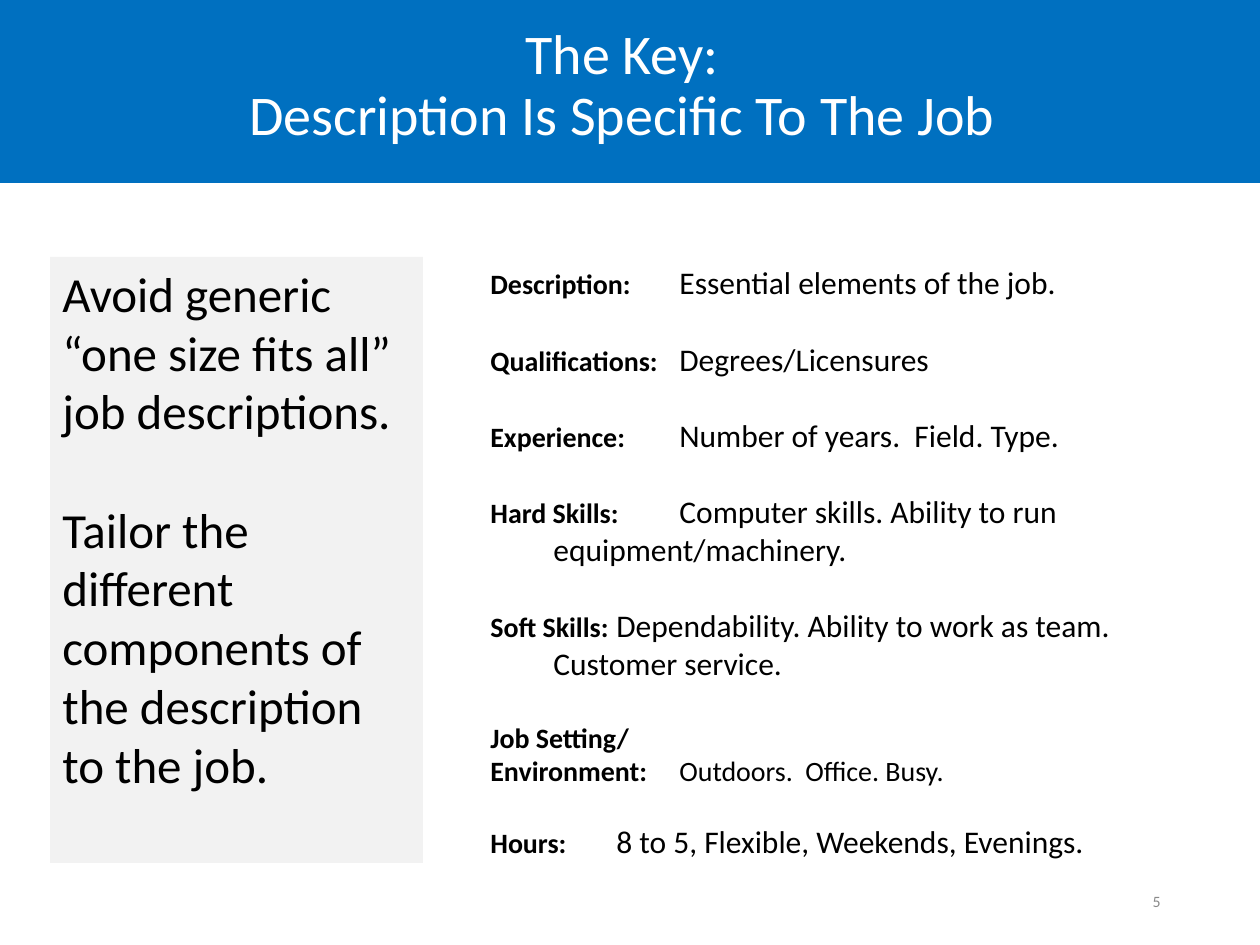
from lxml import etree
from pptx import Presentation
from pptx import util as u
from pptx.dml.color import RGBColor
from pptx.enum import shapes, text
from pptx.oxml import ns

PX = 914400 // 126
FONT = "Calibri"
BLUE = RGBColor(0x00, 0x70, 0xC0)
PALE = RGBColor(0xF2, 0xF2, 0xF2)
WHITE = RGBColor(0xFF, 0xFF, 0xFF)
BLACK = RGBColor(0x00, 0x00, 0x00)
GRAY = RGBColor(0x89, 0x89, 0x89)

ADVICE = [
    "Avoid generic “one size fits all” job descriptions.",
    "Tailor the different components of the description to the job.",
]
ELEMENTS = [
    ("Description:", "Essential elements of the job.", 18, 0),
    ("Qualifications:", "Degrees/Licensures", 18, 22),
    ("Experience:", "Number of years.  Field. Type.", 18, 22),
    ("Hard Skills:", "Computer skills. Ability to run equipment/machinery.", 18, 22),
    ("Soft Skills:", "Dependability. Ability to work as team. Customer service.", 18, 22),
    ("Job Setting/", "", 16, 22),
    ("Environment:", "Outdoors.  Office. Busy.", 16, 0),
    ("Hours:", "8 to 5, Flexible, Weekends, Evenings.", 18, 20),
]


def px(*lengths):
    return [length * PX for length in lengths]


def style(font, size, color, bold=False):
    font.name = FONT
    font.size = u.Pt(size)
    font.bold = bold
    font.color.rgb = color


def add_panel(slide, box, fill):
    panel = slide.shapes.add_shape(shapes.MSO_SHAPE.RECTANGLE, *px(*box))
    panel.shadow.inherit = False
    panel.fill.solid()
    panel.fill.fore_color.rgb = fill
    panel.line.fill.background()
    frame = panel.text_frame
    frame.word_wrap = True
    frame.vertical_anchor = text.MSO_ANCHOR.TOP
    return frame


def next_paragraph(frame, index):
    paragraph = frame.add_paragraph() if index else frame.paragraphs[0]
    paragraph.alignment = text.PP_ALIGN.LEFT
    return paragraph


def set_hanging_tab(paragraph, indent, stop):
    properties = paragraph._p.get_or_add_pPr()
    properties.set("marL", str(indent * PX))
    properties.set("indent", str(-indent * PX))
    tabs = etree.SubElement(properties, ns.qn("a:tabLst"))
    etree.SubElement(tabs, ns.qn("a:tab"), pos=str(stop * PX), algn="l")


def build_title(slide, box):
    title = slide.shapes.title
    title.left, title.top, title.width, title.height = px(*box)
    title.fill.solid()
    title.fill.fore_color.rgb = BLUE
    frame = title.text_frame
    frame.auto_size = text.MSO_AUTO_SIZE.NONE
    frame.vertical_anchor = text.MSO_ANCHOR.MIDDLE
    frame.margin_right, frame.margin_bottom = px(28, 16)
    frame.text = "The Key:\vDescription Is Specific To The Job"
    paragraph = frame.paragraphs[0]
    paragraph.alignment = text.PP_ALIGN.CENTER
    paragraph.line_spacing = 0.9
    style(paragraph.font, 32, WHITE)


def build_advice(slide, box):
    frame = add_panel(slide, box, PALE)
    for index, sentence in enumerate(ADVICE):
        paragraph = next_paragraph(frame, index)
        paragraph.text = sentence
        paragraph.space_before = u.Pt(34 if index else 0)
        style(paragraph.font, 28, BLACK)


def build_elements(slide, box):
    frame = add_panel(slide, box, WHITE)
    for index, (label, detail, size, gap) in enumerate(ELEMENTS):
        paragraph = next_paragraph(frame, index)
        paragraph.space_before = u.Pt(gap)
        set_hanging_tab(paragraph, 63, 190)
        run = paragraph.add_run()
        run.text = label
        style(run.font, 16, BLACK, True)
        if detail:
            run = paragraph.add_run()
            run.text = "\t" + detail
            style(run.font, size, BLACK)


def build_slide_number(slide, box):
    frame = slide.shapes.add_textbox(*px(*box)).text_frame
    frame.word_wrap = True
    frame.vertical_anchor = text.MSO_ANCHOR.MIDDLE
    paragraph = frame.paragraphs[0]
    paragraph.text = "5"
    paragraph.alignment = text.PP_ALIGN.RIGHT
    style(paragraph.font, 9, GRAY)


def main():
    presentation = Presentation()
    presentation.slide_width, presentation.slide_height = u.Inches(10), u.Inches(7.5)
    slide = presentation.slides.add_slide(presentation.slide_layouts[5])
    build_title(slide, (0, 0, 1260, 183))
    build_advice(slide, (50, 257, 373, 606))
    build_elements(slide, (478, 257, 650, 649))
    build_slide_number(slide, (890, 876, 283, 50))
    presentation.save("out.pptx")


if __name__ == "__main__":
    main()
